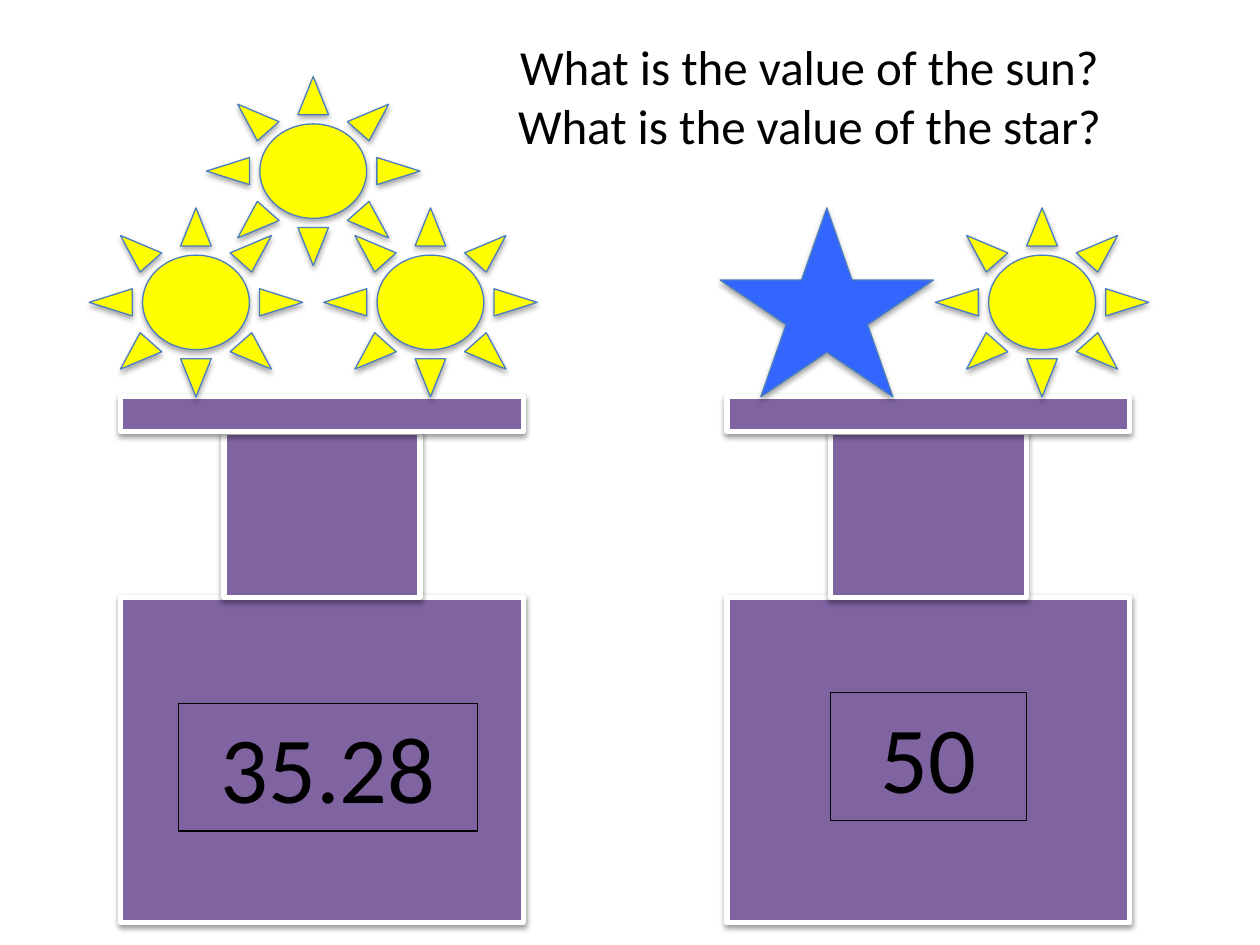
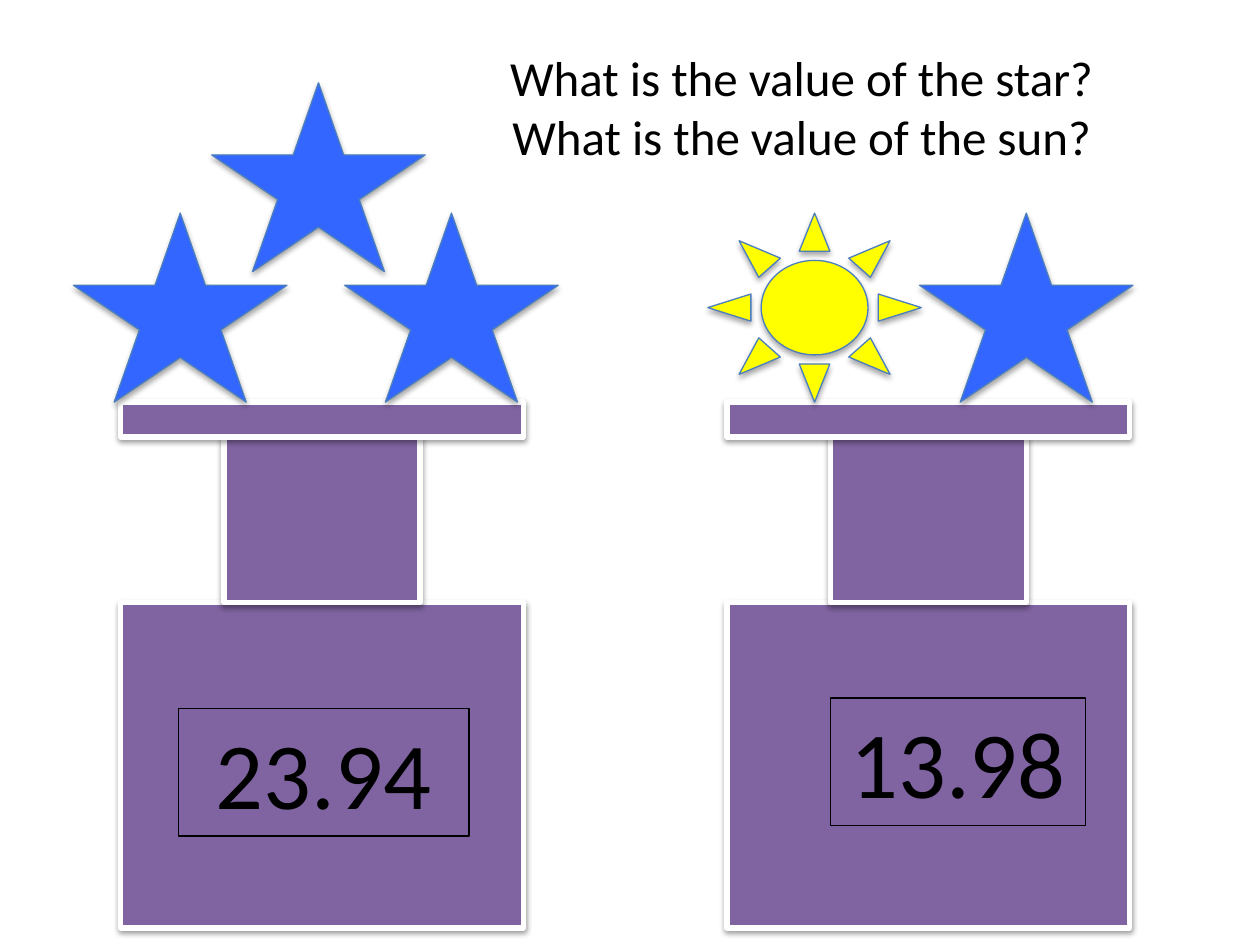
from pptx import Presentation
from pptx.dml.color import RGBColor
from pptx.enum import shapes as kinds, text as txt
from pptx.oxml import parse_xml
from pptx.oxml.ns import nsdecls, qn
from pptx.util import Pt

PURPLE = RGBColor(0x80, 0x64, 0xA2)
YELLOW = RGBColor(0xFF, 0xFF, 0x00)
BLUE = RGBColor(0x33, 0x66, 0xFF)
OUTLINE = RGBColor(0x4B, 0x7E, 0xBC)
WHITE = RGBColor(0xFF, 0xFF, 0xFF)
BLACK = RGBColor(0x00, 0x00, 0x00)

SUN = (kinds.MSO_SHAPE.SUN, YELLOW)
STAR = (kinds.MSO_SHAPE.STAR_5_POINT, BLUE)
TOKEN_W, TOKEN_H = 122, 108
SCALE_W, COLUMN_W = 230, 112
TRAY_H, COLUMN_H, BASE_H = 20, 94.5, 186
READOUT_H = 73
LEFT_SCALE, RIGHT_SCALE = 69, 415.5

FRAME = {"word_wrap": True, "auto_size": txt.MSO_AUTO_SIZE.NONE,
         "vertical_anchor": txt.MSO_ANCHOR.TOP}
PARAGRAPH = {"alignment": txt.PP_ALIGN.CENTER, "space_before": Pt(0)}

PUZZLES = [
    {"top": 226.8,
     "question_box": (288, 17.3, 349, 75),
     "questions": ["What is the value of the sun?", "What is the value of the star?"],
     "scales": [
         (RIGHT_SCALE, "50", (59, 169, 112), [(SUN, 119, 0), (STAR, -4, 0)]),
         (LEFT_SCALE, "35.28", (33, 175, 171),
          [(SUN, 116, 0), (SUN, 49, 75), (SUN, -18, 0)])]},
    {"top": 229.8,
     "question_box": (281.5, 23.8, 353, 75),
     "questions": ["What is the value of the star?", "What is the value of the sun?"],
     "scales": [
         (RIGHT_SCALE, "13.98", (59, 169, 146), [(STAR, 110, 0), (SUN, -11, 0)]),
         (LEFT_SCALE, "23.94", (33, 175, 166),
          [(STAR, -27, 0), (STAR, 52, 74.5), (STAR, 128, 0)])]},
]


def apply(target, values):
    for name, value in values.items():
        setattr(target, name, value)


def points(*lengths):
    return [Pt(length) for length in lengths]


def write(frame, lines, size, **frame_changes):
    apply(frame, {**FRAME, **frame_changes})
    frame.text = "\n".join(lines)
    for paragraph in frame.paragraphs:
        apply(paragraph, PARAGRAPH)
        for run in paragraph.runs:
            apply(run.font, {"name": "Calibri", "size": Pt(size)})
            run.font.color.rgb = BLACK


def outline(shape, color, width):
    shape.line.color.rgb = color
    shape.line.width = Pt(width)


def cast_shadow(shape, distance, opacity):
    shape.shadow.inherit = False
    effects = shape._element.spPr.find(qn("a:effectLst"))
    effects.append(parse_xml(
        f'<a:outerShdw {nsdecls("a")} blurRad="40000" dist="{distance}" '
        f'dir="5400000" rotWithShape="0"><a:srgbClr val="{BLACK}">'
        f'<a:alpha val="{opacity}"/></a:srgbClr></a:outerShdw>'))


def add_solid(parent, kind, box, fill, line, width, distance, opacity):
    solid = parent.shapes.add_shape(kind, *points(*box))
    solid.fill.solid()
    solid.fill.fore_color.rgb = fill
    outline(solid, line, width)
    cast_shadow(solid, distance, opacity)


def add_scale(slide, left, top, reading, readout_box):
    scale = slide.shapes.add_group_shape()
    column_left = left + (SCALE_W - COLUMN_W) / 2
    column_top = top + TRAY_H
    for box in [(left, column_top + COLUMN_H, SCALE_W, BASE_H),
                (column_left, column_top, COLUMN_W, COLUMN_H),
                (left, top, SCALE_W, TRAY_H)]:
        add_solid(scale, kinds.MSO_SHAPE.RECTANGLE, box, PURPLE, WHITE, 3, 20000, 38000)
    dx, dy, width = readout_box
    readout = scale.shapes.add_textbox(*points(left + dx, top + dy, width, READOUT_H))
    outline(readout, BLACK, 0.75)
    write(readout.text_frame, [reading], 54)


def add_tokens(slide, left, top, tokens):
    for (kind, color), dx, rise in tokens:
        box = (left + dx, top - TOKEN_H - rise, TOKEN_W, TOKEN_H)
        add_solid(slide, kind, box, color, OUTLINE, 0.75, 23000, 35000)


def add_questions(slide, box, questions):
    title = slide.shapes.title
    apply(title, dict(zip(("left", "top", "width", "height"), points(*box))))
    write(title.text_frame, questions, 28, word_wrap=False)


def add_puzzle(deck, puzzle):
    slide = deck.slides.add_slide(deck.slide_layouts.get_by_name("Title Only"))
    top = puzzle["top"]
    for left, reading, readout_box, tokens in puzzle["scales"]:
        add_scale(slide, left, top, reading, readout_box)
        add_tokens(slide, left, top, tokens)
    add_questions(slide, puzzle["question_box"], puzzle["questions"])


def main():
    deck = Presentation()
    apply(deck, {"slide_width": Pt(720), "slide_height": Pt(540)})
    for puzzle in PUZZLES:
        add_puzzle(deck, puzzle)
    deck.save("out.pptx")


if __name__ == "__main__":
    main()
